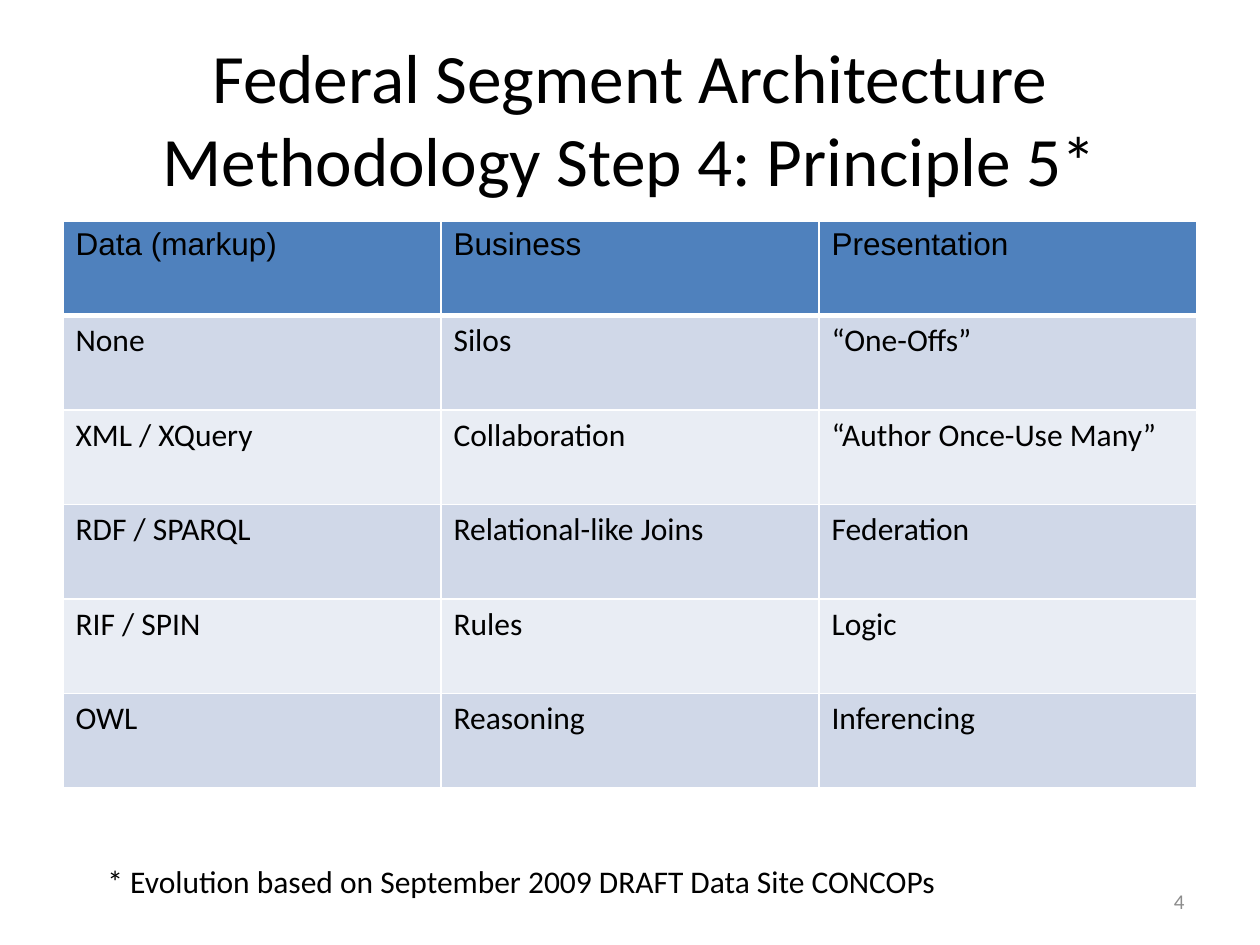
from lxml.etree import SubElement
from pptx import Presentation
from pptx.dml.color import RGBColor
from pptx.enum.text import MSO_ANCHOR as Anchor, PP_ALIGN as Align
from pptx.oxml.ns import qn
from pptx.util import Pt

PX = 914400 / 126
BLACK = RGBColor(0x00, 0x00, 0x00)
GREY = RGBColor(0x8C, 0x8C, 0x8C)
WHITE = RGBColor(0xFF, 0xFF, 0xFF)
HEADER_BLUE = RGBColor(0x4F, 0x81, 0xBD)
BANDS = (RGBColor(0xE9, 0xED, 0xF4), RGBColor(0xD0, 0xD8, 0xE8))

TITLE = "Federal Segment Architecture Methodology Step 4: Principle 5*"
FOOTNOTE = "* Evolution based on September 2009 DRAFT Data Site CONCOPs"
EVOLUTION = [
    ("Data (markup)", "Business", "Presentation"),
    ("None", "Silos", "“One-Offs”"),
    ("XML / XQuery", "Collaboration", "“Author Once-Use Many”"),
    ("RDF / SPARQL", "Relational-like Joins", "Federation"),
    ("RIF / SPIN", "Rules", "Logic"),
    ("OWL", "Reasoning", "Inferencing"),
]


def emu(box):
    return [round(length * PX) for length in box]


def write(frame, words, color=BLACK, align=Align.LEFT, **font_format):
    """Put one formatted paragraph in a text frame."""
    paragraph = frame.paragraphs[0]
    paragraph.alignment = align
    run = paragraph.add_run()
    run.text = words
    run.font.color.rgb = color
    for key, value in ({"name": "Calibri", "size": Pt(18), "bold": False} | font_format).items():
        setattr(run.font, key, value)


def add_text(slide, box, words, anchor=Anchor.TOP, wrap=True, **text_format):
    frame = slide.shapes.add_textbox(*emu(box)).text_frame
    frame.word_wrap = wrap
    frame.vertical_anchor = anchor
    write(frame, words, **text_format)


def add_borders(cell, **widths):
    """Draw white cell borders; widths in points are keyed by side: L, R, T, B."""
    properties = cell._tc.get_or_add_tcPr()
    for side, width in widths.items():
        line = SubElement(properties, qn(f"a:ln{side}"), w=str(Pt(width)))
        fill = SubElement(line, qn("a:solidFill"))
        SubElement(fill, qn("a:srgbClr"), val=str(WHITE))


def add_evolution_table(slide, box):
    left, top, width, height = emu(box)
    row_count, column_count = len(EVOLUTION), len(EVOLUTION[0])
    table = slide.shapes.add_table(row_count, column_count, left, top, width, height).table
    for r, entries in enumerate(EVOLUTION):
        table.rows[r].height = height // row_count
        is_header = r == 0
        for c, entry in enumerate(entries):
            cell = table.cell(r, c)
            add_borders(cell, L=1, R=1, T=3 if r == 1 else 1, B=3 if is_header else 1)
            cell.fill.solid()
            cell.fill.fore_color.rgb = HEADER_BLUE if is_header else BANDS[r % 2]
            write(cell.text_frame, entry, name="Arial" if is_header else "Calibri")


def add_principle_slide(deck, box):
    left, top, width, height = box
    slide = deck.slides.add_slide(deck.slide_layouts[6])
    add_text(slide, (left + 63, top + 38, width - 126, 158), TITLE,
             anchor=Anchor.MIDDLE, align=Align.CENTER, size=Pt(39.6))
    add_evolution_table(slide, (left + 63, top + 221, width - 126, 567))
    add_text(slide, (left + 95, top + height - 89, 862, 89), FOOTNOTE, wrap=False)
    add_text(slide, (left + width - 357, top + height - 69, 294, 50), "4",
             anchor=Anchor.MIDDLE, align=Align.RIGHT, size=Pt(12), color=GREY)


def main():
    deck = Presentation()
    page = (0, 0, 1260, 945)
    deck.slide_width, deck.slide_height = emu(page)[2:]
    add_principle_slide(deck, page)
    deck.save("out.pptx")


if __name__ == "__main__":
    main()
